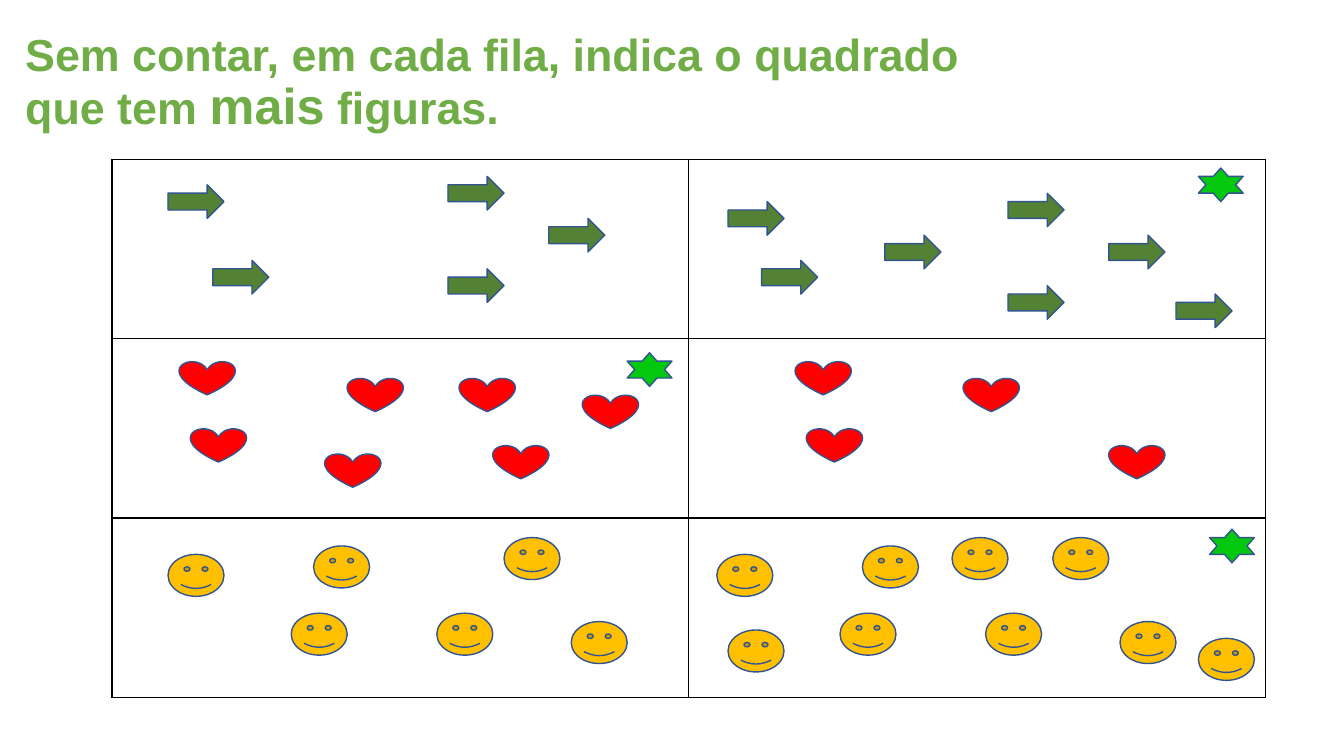
from lxml.etree import SubElement
from pptx import Presentation
from pptx.dml.color import RGBColor
from pptx.enum.shapes import MSO_SHAPE
from pptx.enum.text import MSO_ANCHOR, MSO_AUTO_SIZE, PP_ALIGN
from pptx.oxml.ns import qn
from pptx.util import Inches, Pt

WIDTH, HEIGHT = Inches(13.33), Inches(7.5)
GRID_COLUMNS, GRID_ROWS = 120, 90
OUTLINE = "325491"
TITLE_FONT = {"name": "Arial", "bold": True}
TITLE_RUNS = [
    ("Sem contar, em cada fila, indica o quadrado que tem ", 32),
    ("mais", 36),
    (" figuras.", 32),
]
FIGURES = [
    (MSO_SHAPE.RIGHT_ARROW, "548235", (5, 4), [
        (15, 22), (19, 31), (40, 21), (40, 32), (49, 26),
        (105, 35), (65, 24), (68, 31), (90, 23), (90, 34), (99, 28), (79, 28),
    ]),
    (MSO_SHAPE.HEART, "FF0000", (5, 4), [
        (16, 43), (31, 45), (44, 53), (17, 51), (71, 43), (86, 45),
        (99, 53), (72, 51), (52, 47), (29, 54), (41, 45),
    ]),
    (MSO_SHAPE.SMILEY_FACE, "FFC000", (5, 5), [
        (15, 66), (28, 65), (26, 73), (45, 64), (39, 73), (51, 74),
        (64, 66), (77, 65), (75, 73), (94, 64), (88, 73), (100, 74),
        (65, 75), (85, 64), (107, 76),
    ]),
    (MSO_SHAPE.STAR_6_POINT, "04C80D", (4, 4), [(107, 20), (56, 42), (108, 63)]),
]


def color(value):
    return RGBColor.from_string(value)


def apply(target, values):
    for key, value in values.items():
        setattr(target, key, value)


def grid_box(column, row, columns, rows):
    x_step, y_step = WIDTH / GRID_COLUMNS, HEIGHT / GRID_ROWS
    return [round(n) for n in
            (column * x_step, row * y_step, columns * x_step, rows * y_step)]


def add_title(slide, box):
    title = slide.shapes.title
    apply(title, dict(zip(("left", "top", "width", "height"), box)))
    apply(title.text_frame, {
        "word_wrap": True,
        "auto_size": MSO_AUTO_SIZE.NONE,
        "vertical_anchor": MSO_ANCHOR.MIDDLE,
    })
    sentence = title.text_frame.paragraphs[0]
    apply(sentence, {"alignment": PP_ALIGN.LEFT, "line_spacing": 0.9})
    for words, size in TITLE_RUNS:
        run = sentence.add_run()
        run.text = words
        apply(run.font, {**TITLE_FONT, "size": Pt(size)})
        run.font.color.rgb = color("70AD47")


def add_borders(cell):
    properties = cell._tc.get_or_add_tcPr()
    for side in ("a:lnL", "a:lnR", "a:lnT", "a:lnB"):
        border = SubElement(properties, qn(side), w=str(Pt(1)))
        fill = SubElement(border, qn("a:solidFill"))
        SubElement(fill, qn("a:srgbClr"), val="000000")


def add_squares(slide, box):
    squares = slide.shapes.add_table(3, 2, *box).table
    apply(squares, {"first_row": False, "horz_banding": False})
    for cell in squares.iter_cells():
        add_borders(cell)
        cell.fill.background()


def add_figure(slide, kind, fill, box):
    figure = slide.shapes.add_shape(kind, *box)
    figure.shadow.inherit = False
    figure.fill.solid()
    figure.fill.fore_color.rgb = color(fill)
    figure.line.color.rgb = color(OUTLINE)
    figure.line.width = Pt(1)


def main():
    deck = Presentation()
    apply(deck, {"slide_width": WIDTH, "slide_height": HEIGHT})
    slide = deck.slides.add_slide(deck.slide_layouts[5])
    add_title(slide, grid_box(1.35, 3.25, 87, 13.45))
    add_squares(slide, grid_box(10, 19, 103, 64))
    for kind, fill, size, places in FIGURES:
        for place in places:
            add_figure(slide, kind, fill, grid_box(*place, *size))
    deck.save("out.pptx")


if __name__ == "__main__":
    main()
